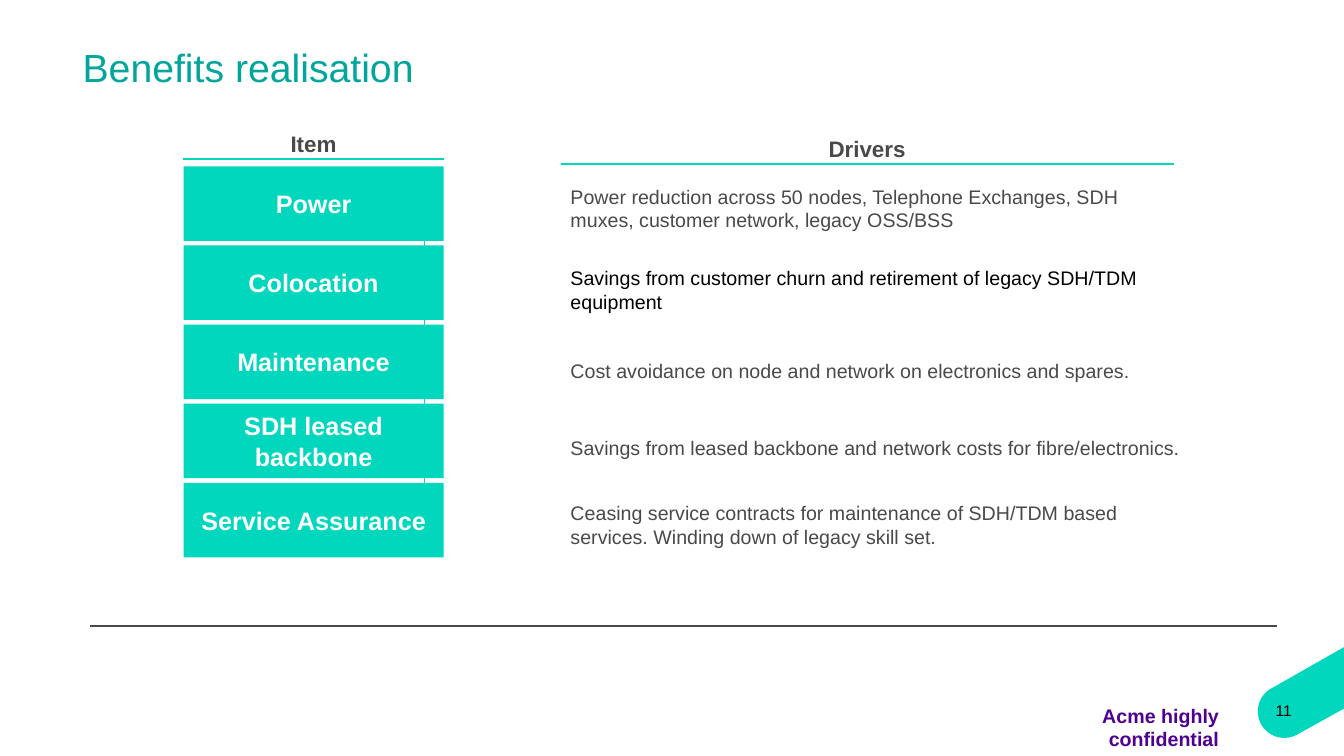
"""Build the benefits realisation slide."""
from pptx import Presentation
from pptx.dml.color import RGBColor
from pptx.enum.shapes import MSO_CONNECTOR as Conn, MSO_SHAPE as Kind
from pptx.enum.text import MSO_ANCHOR as Anchor, PP_ALIGN as Align
from pptx.oxml.ns import qn
from pptx.util import Inches, Pt
from lxml.etree import SubElement

TEAL, GREY = "00D7BD", "484A47"


def rgb(code):
    return RGBColor.from_string(code)


def write(shape, text, size, color, bold=False, align=Align.LEFT,
          anchor=Anchor.TOP, wrap=True, inset=None):
    frame = shape.text_frame
    form = {"word_wrap": wrap, "vertical_anchor": anchor}
    if inset is not None:
        for side in ("left", "top", "right", "bottom"):
            form["margin_" + side] = Inches(inset)
    for key, val in form.items():
        setattr(frame, key, val)
    para = frame.paragraphs[0]
    para.alignment = align
    run = para.add_run()
    run.text = text
    for key, val in {"name": "Arial", "size": Pt(size), "bold": bold}.items():
        setattr(run.font, key, val)
    run.font.color.rgb = rgb(color)
    return para


deck = Presentation()
deck.slide_width, deck.slide_height = Inches(13.33), Inches(7.5)
slide = deck.slides.add_slide(deck.slide_layouts[6])
shapes = slide.shapes

curves = [
    [(12.61, 6.83), (12.48, 6.9), (12.44, 7.06), (12.51, 7.19)],
    [(12.51, 7.19), (12.59, 7.32), (12.75, 7.36), (12.88, 7.28)],
]
steps = 16
edge = [(13.33, 6.42), (12.61, 6.83)]
for curve in curves:
    for step in range(1, steps + 1):
        t = step / steps
        parts = ((1 - t) ** 3, 3 * t * (1 - t) ** 2, 3 * t ** 2 * (1 - t), t ** 3)
        edge.append([sum(w * p[i] for w, p in zip(parts, curve)) for i in (0, 1)])
edge.append((13.33, 7.03))
dots = [(Inches(x), Inches(y)) for x, y in edge]
pen = shapes.build_freeform(*dots[0])
pen.add_line_segments(dots[1:], close=True)
corner = pen.convert_to_shape()
corner.shadow.inherit = False
corner.fill.solid()
corner.fill.fore_color.rgb = rgb(TEAL)
corner.line.fill.background()

lines = [
    (4.21, 1.94, 4.21, 5.08, TEAL, 0.5),
    (0.89, 6.21, 12.67, 6.21, GREY, 1),
    (1.82, 1.58, 4.4, 1.58, TEAL, 1.5),
    (5.56, 1.63, 11.64, 1.63, TEAL, 1.5),
]
for *ends, color, width in lines:
    line = shapes.add_connector(Conn.STRAIGHT, *map(Inches, ends))
    line.line.color.rgb = rgb(color)
    line.line.width = Pt(width)
    SubElement(line._element.spPr, qn("a:effectLst"))

head = {"size": 16, "color": GREY, "bold": True, "align": Align.CENTER, "wrap": False}
body = {"size": 14, "color": GREY, "anchor": Anchor.MIDDLE}
labels = [
    ("Benefits realisation", (0.82, 0.43, 12.36, 1.02),
     {"size": 28, "color": "00A59B", "inset": 0}),
    ("Item", (2.78, 1.24, 0.66, 0.37), head),
    ("Drivers", (8.11, 1.29, 0.98, 0.37), head),
    ("Acme highly confidential", (9.83, 6.93, 2.36, 0.34),
     {"size": 14, "color": "500091", "bold": True, "align": Align.RIGHT, "wrap": False}),
    ("Power reduction across 50 nodes, Telephone Exchanges, SDH muxes, "
     "customer network, legacy OSS/BSS", (5.56, 1.78, 6.08, 0.57), body),
    ("Savings from customer churn and retirement of legacy SDH/TDM equipment",
     (5.56, 2.59, 6.08, 0.57), {**body, "color": "000000"}),
    ("Cost avoidance on node and network on electronics and spares.",
     (5.56, 3.51, 6.08, 0.34), body),
    ("Savings from leased backbone and network costs for fibre/electronics.",
     (5.56, 4.27, 6.63, 0.34), body),
    ("Ceasing service contracts for maintenance of SDH/TDM based services. "
     "Winding down of legacy skill set.", (5.56, 4.92, 6.08, 0.57), body),
    ("11", (12.33, 7, 0.48, 0.25),
     {"size": 11, "color": "000000", "align": Align.RIGHT, "inset": 0}),
]
for text, place, form in labels:
    para = write(shapes.add_textbox(*map(Inches, place)), text, **form)
para.line_spacing = Pt(9.7)

items = ["Power", "Colocation", "Maintenance", "SDH leased backbone", "Service Assurance"]
for row, item in enumerate(items):
    place = (1.82, 1.65 + row * 0.785, 2.58, 0.74)
    box = shapes.add_shape(Kind.RECTANGLE, *map(Inches, place))
    box.shadow.inherit = False
    box.fill.solid()
    box.fill.fore_color.rgb = rgb(TEAL)
    box.line.fill.background()
    write(box, item, 18, "FFFFFF", True, Align.CENTER, Anchor.MIDDLE)

deck.save("out.pptx")
